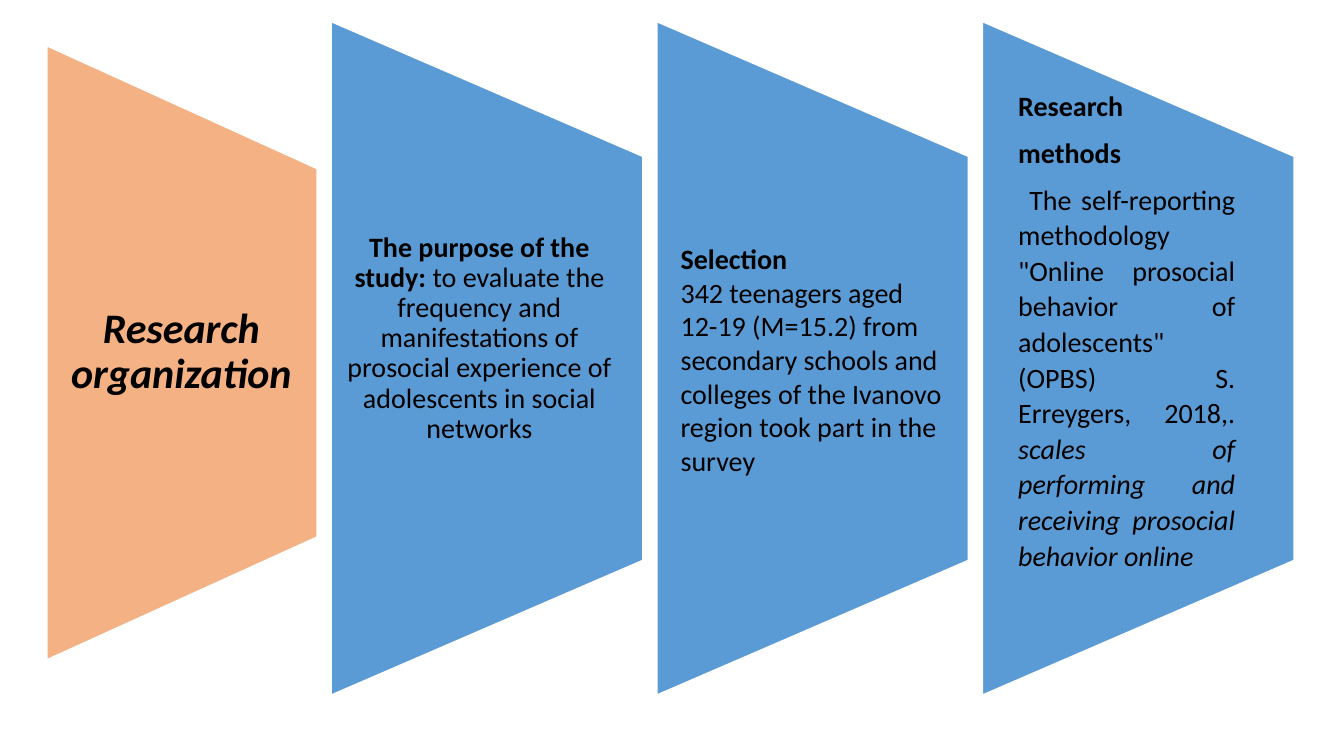
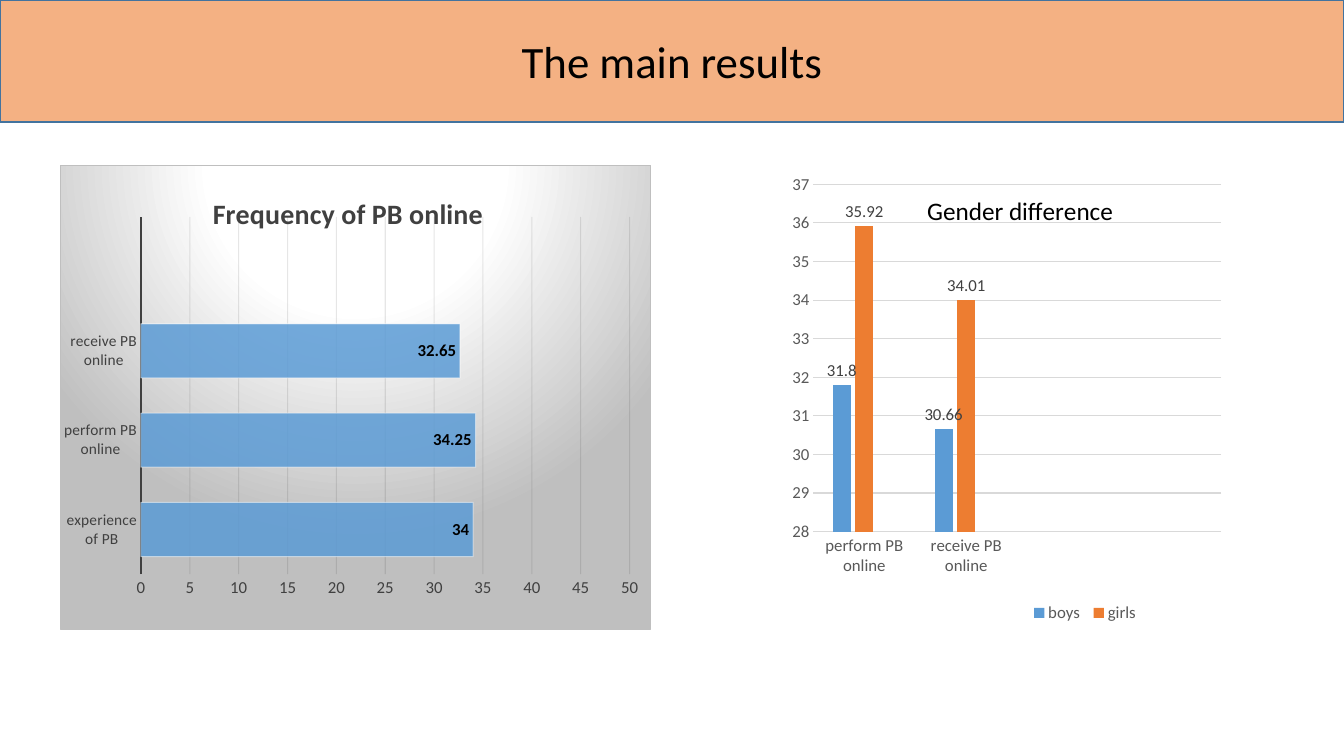
"""Build two slides on adolescents' prosocial behaviour (PB) online: study design and results."""
from dataclasses import dataclass
from typing import NamedTuple, Optional

from lxml import etree
from pptx import Presentation
from pptx import util as u
from pptx.chart import data as chart_data
from pptx.dml.color import RGBColor
from pptx.enum import chart as charts, shapes, text
from pptx.oxml import ns, parse_xml

PX = 9144
SLIDE_W, SLIDE_H = 1333, 750
FONT = "Calibri"
PEACH = RGBColor(0xF4, 0xB1, 0x83)
BLUE = RGBColor(0x5B, 0x9B, 0xD5)
ORANGE = RGBColor(0xED, 0x7D, 0x31)
GRAY = RGBColor(0xA5, 0xA5, 0xA5)
BAND_EDGE = RGBColor(0x43, 0x73, 0x9E)
BLACK = RGBColor(0x00, 0x00, 0x00)
WHITE = RGBColor(0xFF, 0xFF, 0xFF)
NEAR_BLACK = RGBColor(0x0D, 0x0D, 0x0D)
DARK = RGBColor(0x40, 0x40, 0x40)
MID = RGBColor(0x59, 0x59, 0x59)
PALE = RGBColor(0xD9, 0xD9, 0xD9)
CENTER, LEFT, JUSTIFY = (text.PP_ALIGN.CENTER, text.PP_ALIGN.LEFT,
                         text.PP_ALIGN.JUSTIFY)
NO_FILL = "<a:noFill/><a:ln><a:noFill/></a:ln>"
SPOTLIGHT = (
    '<a:gradFill><a:gsLst>'
    '<a:gs pos="0"><a:srgbClr val="FFFFFF"/></a:gs>'
    '<a:gs pos="39000"><a:srgbClr val="FFFFFF"/></a:gs>'
    '<a:gs pos="100000"><a:srgbClr val="BFBFBF"/></a:gs></a:gsLst>'
    '<a:path path="circle"><a:fillToRect l="50000" t="-80000" r="50000" b="180000"/></a:path>'
    '</a:gradFill><a:ln w="9525"><a:solidFill><a:srgbClr val="BFBFBF"/></a:solidFill></a:ln>')


class Box(NamedTuple):
    left: int
    top: int
    width: int
    height: int

    def emu(self) -> tuple:
        return tuple(u.Emu(side * PX) for side in self)


class Run(NamedTuple):
    words: str
    bold: bool = False
    italic: bool = False
    font: str = FONT


@dataclass
class Panel:
    outline: Box
    color: RGBColor
    text_box: Box
    paragraphs: list
    style: dict


@dataclass
class ChartSpec:
    box: Box
    kind: charts.XL_CHART_TYPE
    categories: list
    series: list
    heading: str
    heading_font: tuple
    heading_at: tuple
    plot: tuple
    gap: int
    overlap: int
    scale: tuple
    axis_color: RGBColor
    category_size: int
    category_line: tuple
    grid_color: RGBColor
    label_position: charts.XL_LABEL_POSITION
    label_font: tuple
    background: str
    legend_at: Optional[tuple] = None


def style_font(font, size: float, color: RGBColor, bold: bool = False,
               italic: bool = False, name: str = FONT) -> None:
    font.size, font.name, font.bold, font.italic = u.Pt(size), name, bold, italic
    font.color.rgb = color


def write(frame, paragraphs: list, *, size: int = 20, align=LEFT,
          line_spacing: float = 1.0, after: int = 0, inset: tuple = (10, 5),
          anchor=text.MSO_ANCHOR.MIDDLE) -> None:
    frame.word_wrap = True
    frame.auto_size = text.MSO_AUTO_SIZE.NONE
    frame.vertical_anchor = anchor
    frame.margin_left = frame.margin_right = u.Emu(inset[0] * PX)
    frame.margin_top = frame.margin_bottom = u.Emu(inset[1] * PX)
    for index, runs in enumerate(paragraphs):
        paragraph = frame.paragraphs[0] if index == 0 else frame.add_paragraph()
        paragraph.alignment = align
        paragraph.line_spacing = line_spacing
        paragraph.space_after = u.Pt(after)
        for part in runs:
            run = paragraph.add_run()
            run.text = part.words
            style_font(run.font, size, BLACK, part.bold, part.italic, part.font)


def move(shape, box: Box) -> None:
    shape.left, shape.top, shape.width, shape.height = box.emu()


def paint(shape, fill: RGBColor, line: RGBColor) -> None:
    shape.fill.solid()
    shape.fill.fore_color.rgb = fill
    shape.line.color.rgb = line
    shape.line.width = u.Pt(1)


def draw_trapezoid(slide, outline: Box, color: RGBColor) -> None:
    left, top, width, height = outline
    shift = (height - width) // 2
    turned = Box(left - shift, top + shift, height, width)
    trapezoid = slide.shapes.add_shape(
        shapes.MSO_SHAPE.FLOWCHART_MANUAL_OPERATION, *turned.emu())
    trapezoid.rotation = 270
    trapezoid.shadow.inherit = False
    paint(trapezoid, color, WHITE)


def draw_panel(slide, panel: Panel) -> None:
    draw_trapezoid(slide, panel.outline, panel.color)
    words = slide.shapes.add_textbox(*panel.text_box.emu())
    write(words.text_frame, panel.paragraphs, **panel.style)


def chart_xml(tag: str, body: str):
    return parse_xml(f'<c:{tag} {ns.nsdecls("c", "a")}>{body}</c:{tag}>')


def set_layout(chart, parent_query: str, index: int, edges: tuple, target: str = "") -> None:
    parent = chart.element.xpath(parent_query)[0]
    for old in parent.xpath("c:layout"):
        parent.remove(old)
    body = target + '<c:xMode val="edge"/><c:yMode val="edge"/>'
    body += "".join(f'<c:{key} val="{edge}"/>' for key, edge in zip("xywh", edges))
    parent.insert(index, chart_xml("layout", f"<c:manualLayout>{body}</c:manualLayout>"))


def set_alpha(chart, query: str, percent: int) -> None:
    for color in chart.element.xpath(query + "/a:solidFill/a:srgbClr"):
        etree.SubElement(color, ns.qn("a:alpha")).set("val", str(percent * 1000))


def style_axes(chart, spec: ChartSpec) -> None:
    category, value = chart.category_axis, chart.value_axis
    for axis, size in ((category, spec.category_size), (value, 12)):
        axis.major_tick_mark = axis.minor_tick_mark = charts.XL_TICK_MARK.NONE
        style_font(axis.tick_labels.font, size, spec.axis_color)
    category.has_major_gridlines = False
    line_color, line_width = spec.category_line
    category.format.line.color.rgb = line_color
    category.format.line.width = u.Pt(line_width)
    value.minimum_scale, value.maximum_scale, value.major_unit = spec.scale
    value.format.line.fill.background()
    value.has_major_gridlines = True
    value.major_gridlines.format.line.color.rgb = spec.grid_color
    value.major_gridlines.format.line.width = u.Pt(0.75)


def add_legend(chart, edges: tuple) -> None:
    chart.has_legend = True
    chart.legend.position = charts.XL_LEGEND_POSITION.BOTTOM
    chart.legend.include_in_layout = False
    style_font(chart.legend.font, 12, MID)
    hidden = chart_xml("legendEntry", '<c:idx val="2"/><c:delete val="1"/>')
    chart.element.xpath("//c:legend")[0].insert(1, hidden)
    set_layout(chart, "//c:legend", 2, edges)


def draw_chart(slide, spec: ChartSpec):
    values = chart_data.CategoryChartData()
    values.categories = spec.categories
    for name, numbers, _ in spec.series:
        values.add_series(name, numbers)
    chart = slide.shapes.add_chart(spec.kind, *spec.box.emu(), values).chart
    style_font(chart.font, 10, BLACK)

    chart.has_title = True
    heading = chart.chart_title.text_frame
    heading.text = spec.heading
    style_font(heading.paragraphs[0].runs[0].font, *spec.heading_font)
    set_layout(chart, "c:chart/c:title", 1, spec.heading_at)
    set_layout(chart, "//c:plotArea", 0, spec.plot, '<c:layoutTarget val="inner"/>')

    bars = chart.plots[0]
    bars.gap_width, bars.overlap, bars.vary_by_categories = spec.gap, spec.overlap, False
    for series, (_, _, color) in zip(bars.series, spec.series):
        series.invert_if_negative = False
        series.format.fill.solid()
        series.format.fill.fore_color.rgb = color
        labels = series.data_labels
        labels.show_value = True
        labels.position = spec.label_position
        style_font(labels.font, *spec.label_font)

    style_axes(chart, spec)
    chart.has_legend = False
    if spec.legend_at:
        add_legend(chart, spec.legend_at)
    chart.element.xpath("c:chart")[0].addnext(chart_xml("spPr", spec.background))
    return chart


PANEL_W, PANEL_H, PANEL_TOP = 309, 668, 22
PANELS = [
    Panel(Box(328, PANEL_TOP, PANEL_W, PANEL_H), BLUE, Box(314, 128, 323, 416),
          [[Run("The purpose of the study: ", bold=True),
            Run("to evaluate the frequency and manifestations of prosocial "
                "experience of adolescents in social networks")]],
          dict(align=CENTER, line_spacing=0.9, inset=(24, 0))),
    Panel(Box(651, PANEL_TOP, PANEL_W, PANEL_H), BLUE, Box(651, 156, 309, 401),
          [[Run("Selection", bold=True)],
           [Run("342 teenagers aged 12-19 (M=15.2) from secondary schools and "
                "colleges of the Ivanovo region took part in the survey")]],
          dict(inset=(24, 0))),
    Panel(Box(974, PANEL_TOP, PANEL_W, PANEL_H), BLUE, Box(1000, 81, 235, 496),
          [[Run("Research ", bold=True)],
           [Run("methods", bold=True)],
           [Run(" ", bold=True, font="Arial"),
            Run('The self-reporting methodology "Online prosocial behavior of '
                'adolescents" (OPBS) S. Erreygers, 2018,.'),
            Run(" scales of performing and receiving prosocial behavior online",
                italic=True)]],
          dict(align=JUSTIFY, line_spacing=1.06, after=8, anchor=text.MSO_ANCHOR.TOP)),
]

FREQUENCY = ChartSpec(
    box=Box(59, 164, 587, 461), kind=charts.XL_CHART_TYPE.BAR_CLUSTERED,
    categories=["experience of PB", "perform PB online", "receive PB online", ""],
    series=[("Series 1", (34, 34.25, 32.65, None), BLUE)],
    heading="Frequency of PB online", heading_font=(20, DARK, True),
    heading_at=(0.25, 0.05), plot=(0.137, 0.11, 0.827, 0.771), gap=65, overlap=0,
    scale=(0, 50, 5), axis_color=DARK, category_size=11, category_line=(DARK, 1.5),
    grid_color=NEAR_BLACK, label_position=charts.XL_LABEL_POSITION.INSIDE_END,
    label_font=(12, BLACK, True), background=SPOTLIGHT)

GENDER = ChartSpec(
    box=Box(761, 172, 467, 513), kind=charts.XL_CHART_TYPE.COLUMN_CLUSTERED,
    categories=["perform PB online", "receive PB online", "", ""],
    series=[("boys", (31.8, 30.66, None, None), BLUE),
            ("girls", (35.92, 34.01, None, None), ORANGE),
            ("Series 3", (None,) * 4, GRAY)],
    heading="Gender difference", heading_font=(18, BLACK),
    heading_at=(0.33, 0.03), plot=(0.098, 0.021, 0.866, 0.672), gap=219, overlap=-27,
    scale=(28, 37, 1), axis_color=MID, category_size=12, category_line=(PALE, 0.75),
    grid_color=PALE, label_position=charts.XL_LABEL_POSITION.OUTSIDE_END,
    label_font=(12, DARK), background=NO_FILL, legend_at=(0.55, 0.82, 0.25, 0.06))


def add_titled_slide(deck, title_box: Box, title_run: Run, **style):
    slide = deck.slides.add_slide(deck.slide_layouts[5])
    title = slide.shapes.title
    move(title, title_box)
    write(title.text_frame, [[title_run]], align=CENTER, **style)
    return slide


def build_organization(deck) -> None:
    slide = add_titled_slide(deck, Box(46, 167, 268, 365),
                             Run("Research organization", bold=True, italic=True),
                             size=30, line_spacing=0.9, inset=(21, 0))
    draw_trapezoid(slide, Box(46, 46, 268, 609), PEACH)
    slide.shapes.title.element.getparent().append(slide.shapes.title.element)
    for panel in PANELS:
        draw_panel(slide, panel)


def build_results(deck) -> None:
    slide = add_titled_slide(deck, Box(0, 0, SLIDE_W, 121), Run("The main results"), size=32)
    paint(slide.shapes.title, PEACH, BAND_EDGE)
    frequency = draw_chart(slide, FREQUENCY)
    bar_line = frequency.plots[0].series[0].format.line
    bar_line.color.rgb = WHITE
    bar_line.width = u.Pt(0.75)
    set_alpha(frequency, "//c:ser/c:spPr", 85)
    set_alpha(frequency, "//c:ser/c:spPr/a:ln", 50)
    set_alpha(frequency, "//c:majorGridlines/c:spPr/a:ln", 10)
    draw_chart(slide, GENDER)


def main() -> None:
    deck = Presentation()
    deck.slide_width, deck.slide_height = u.Emu(SLIDE_W * PX), u.Emu(SLIDE_H * PX)
    build_organization(deck)
    build_results(deck)
    deck.save("out.pptx")


if __name__ == "__main__":
    main()
